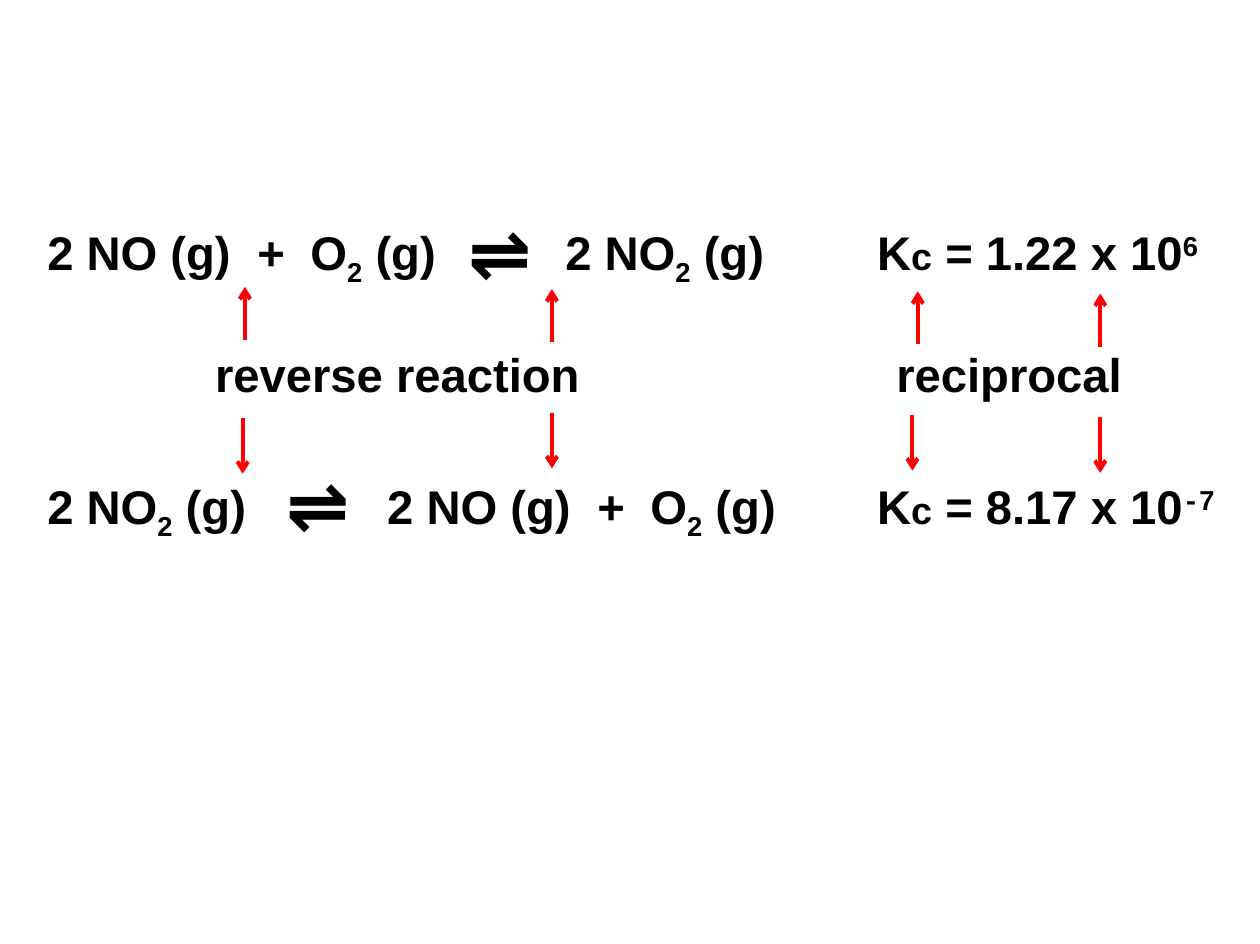
from dataclasses import dataclass

from pptx import Presentation
from pptx import util as u
from pptx.dml.color import RGBColor
from pptx.enum import shapes, text
from pptx.oxml.ns import qn
from lxml import etree


@dataclass(frozen=True)
class Theme:
    ink: RGBColor = RGBColor(0, 0, 0)
    arrow: RGBColor = RGBColor(255, 0, 0)
    font: str = "Arial"
    minus_font: str = "Courier New"
    body: float = 30
    small: float = 24
    symbol: float = 48
    arrow_width: float = 2.5


THEME = Theme()


@dataclass(frozen=True)
class Piece:
    text: str
    size: float = THEME.body
    baseline: int = 0
    font: str = THEME.font


@dataclass(frozen=True)
class Label:
    """A line of text; all lengths, tab stops included, are in centimetres."""
    left: float
    top: float
    width: float
    height: float
    pieces: tuple[Piece, ...]
    tabs: tuple[float, ...] = ()
    wrap: bool = True


@dataclass(frozen=True)
class Arrow:
    """A vertical arrow; a negative length points up."""
    x: float
    start: float
    length: float


LINE_H, SYMBOL_H = 1.55, 2.31
EQUATION_LEFT, KC_LEFT = 0.81, 19.41
FORWARD_TOP, LINK_TOP, REVERSE_TOP = 4.88, 7.62, 10.58
UP, DOWN = -1.19, 1.25

SUB_2 = Piece("2", baseline=-25)
EQUILIBRIUM = (Piece("⇌", THEME.symbol),)


def kc(value: str, *exponent: Piece) -> tuple[Piece, ...]:
    return (Piece("K"), Piece("c", THEME.small),
            Piece(f" = {value} x 10"), *exponent)


LABELS = (
    Label(EQUATION_LEFT, FORWARD_TOP, 17.4, LINE_H,
          (Piece("2 NO (g)\t+\tO"), SUB_2, Piece(" (g)\t2 NO"), SUB_2, Piece(" (g)")),
          tabs=(4.71, 5.9, 11.61)),
    Label(10.26, 4.47, 2.34, SYMBOL_H, EQUILIBRIUM),
    Label(EQUATION_LEFT, REVERSE_TOP, 17.9, LINE_H,
          (Piece("2 NO"), SUB_2, Piece(" (g)\t2 NO (g)\t+\tO"), SUB_2, Piece(" (g)")),
          tabs=(7.62, 12.33, 13.52)),
    Label(6.17, 10.13, 1.88, SYMBOL_H, EQUILIBRIUM),
    Label(KC_LEFT, FORWARD_TOP, 8.13, LINE_H,
          kc("1.22", Piece("6", baseline=30)), wrap=False),
    Label(KC_LEFT, REVERSE_TOP, 8.53, LINE_H,
          kc("8.17", Piece("-", baseline=30, font=THEME.minus_font),
             Piece("7", baseline=30)), wrap=False),
    Label(4.57, LINK_TOP, 9.73, LINE_H, (Piece("reverse reaction"),)),
    Label(19.84, LINK_TOP, 5.66, LINE_H, (Piece("reciprocal"),)),
)

ARROWS = (
    Arrow(5.49, 7.62, UP), Arrow(12.37, 7.67, UP),
    Arrow(5.44, 9.37, DOWN), Arrow(12.37, 9.25, DOWN),
    Arrow(20.57, 7.72, UP), Arrow(24.66, 7.77, UP),
    Arrow(20.45, 9.3, DOWN), Arrow(24.66, 9.35, DOWN),
)


def add_label(slide, label: Label) -> None:
    box = (label.left, label.top, label.width, label.height)
    tf = slide.shapes.add_textbox(*map(u.Cm, box)).text_frame
    tf.word_wrap = label.wrap
    tf.auto_size = text.MSO_AUTO_SIZE.SHAPE_TO_FIT_TEXT
    p = tf.paragraphs[0]
    if label.tabs:
        stops = etree.SubElement(p._p.get_or_add_pPr(), qn("a:tabLst"))
        for pos in label.tabs:
            etree.SubElement(stops, qn("a:tab"), pos=str(u.Cm(pos)), algn="l")
    for piece in label.pieces:
        r = p.add_run()
        r.text = piece.text
        style = {"name": piece.font, "size": u.Pt(piece.size), "bold": True}
        for name, value in style.items():
            setattr(r.font, name, value)
        r.font.color.rgb = THEME.ink
        if piece.baseline:
            r._r.get_or_add_rPr().set("baseline", str(piece.baseline * 1000))


def add_arrow(slide, arrow: Arrow) -> None:
    ends = (arrow.x, arrow.start, arrow.x, arrow.start + arrow.length)
    sp = slide.shapes.add_connector(shapes.MSO_CONNECTOR.STRAIGHT, *map(u.Cm, ends))
    sp.line.color.rgb = THEME.arrow
    sp.line.width = u.Pt(THEME.arrow_width)
    etree.SubElement(sp.line._get_or_add_ln(), qn("a:tailEnd"), type="arrow")
    etree.SubElement(sp._element.spPr, qn("a:effectLst"))


def main() -> None:
    prs = Presentation()
    prs.slide_width, prs.slide_height = u.Cm(28.24), u.Cm(21.16)
    slide = prs.slides.add_slide(prs.slide_layouts.get_by_name("Blank"))
    for label in LABELS:
        add_label(slide, label)
    for arrow in ARROWS:
        add_arrow(slide, arrow)
    prs.save("out.pptx")


if __name__ == "__main__":
    main()
